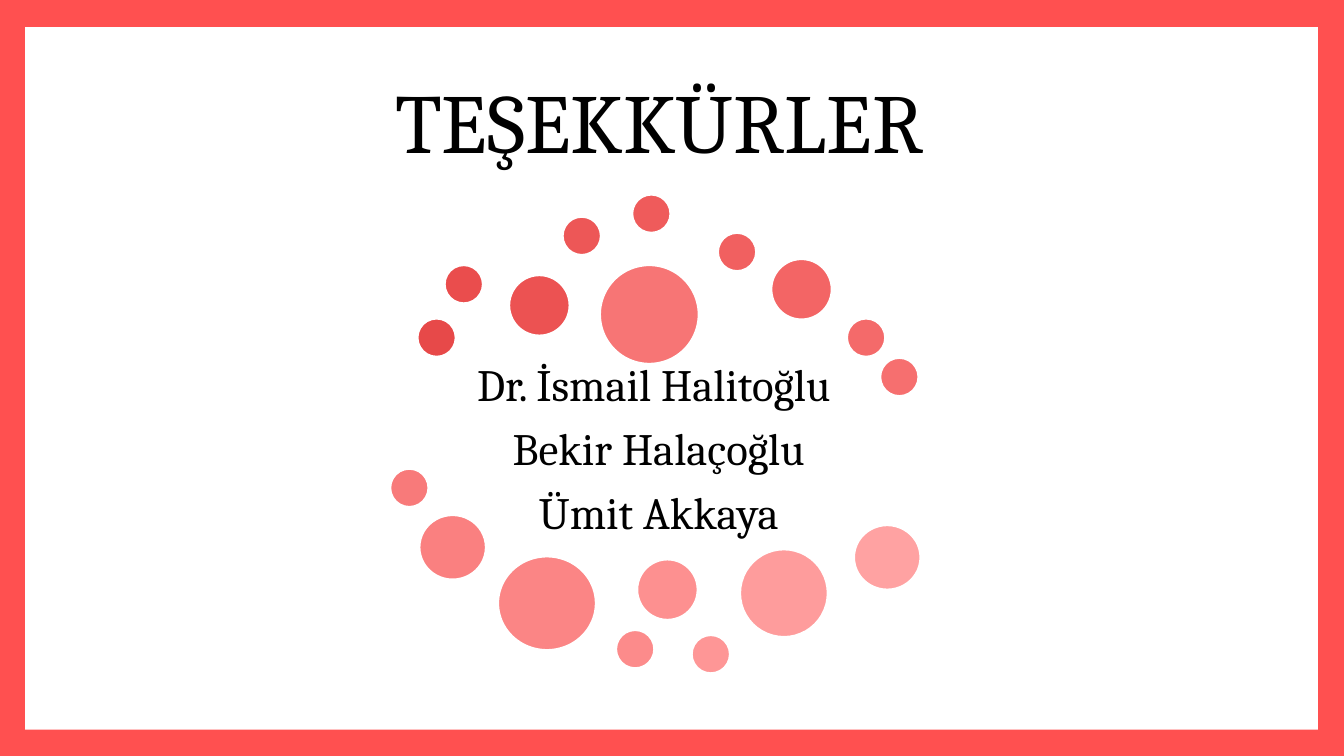
from pptx import Presentation
from pptx.dml.color import RGBColor
from pptx.enum.shapes import MSO_SHAPE as Shape
from pptx.enum.text import MSO_ANCHOR as Anchor, PP_ALIGN as Align
from pptx.util import Inches, Pt

WIDTH, HEIGHT = 13.33, 7.5
CORAL = RGBColor(0xFF, 0x50, 0x50)
WHITE = RGBColor(0xFF, 0xFF, 0xFF)
BLACK = RGBColor(0, 0, 0)
FONT = "Cambria"

NAMES = ["Dr. İsmail Halitoğlu ", "Bekir Halaçoğlu", "Ümit Akkaya"]

# Dot sizes: width, height in inches
SMALL, MEDIUM, LARGE = (0.38, 0.38), (0.6, 0.6), (0.98, 0.98)
OVAL, WIDE, ROUND = (0.66, 0.64), (0.97, 0.93), (0.87, 0.87)

# Dots of the ring: left and top within the ring, size, colour
DOTS = [
    (0.27, 1.23, SMALL, "E74949"),
    (0.54, 0.7, SMALL, "EA4D4D"),
    (1.18, 0.8, MEDIUM, "EC5252"),
    (1.71, 0.22, SMALL, "ED5757"),
    (2.4, 0, SMALL, "EF5B5B"),
    (3.25, 0.38, SMALL, "F16060"),
    (3.78, 0.64, MEDIUM, "F36565"),
    (4.53, 1.23, SMALL, "F46A6A"),
    (4.86, 1.62, SMALL, "F66F6F"),
    (2.08, 0.7, LARGE, "F77575"),
    (0, 2.72, SMALL, "F87A7A"),
    (0.29, 3.18, OVAL, "FA8080"),
    (1.07, 3.59, WIDE, "FB8585"),
    (2.24, 4.32, SMALL, "FC8B8B"),
    (2.45, 3.62, MEDIUM, "FD9090"),
    (2.99, 4.37, SMALL, "FE9696"),
    (3.47, 3.52, ROUND, "FE9C9C"),
    (4.6, 3.28, OVAL, "FFA2A2"),
]


def add_panel(page, kind, box, color):
    panel = page.shapes.add_shape(kind, *map(Inches, box))
    panel.shadow.inherit = False
    panel.fill.solid()
    panel.fill.fore_color.rgb = color
    panel.line.fill.background()
    return panel


def add_lines(page, box, lines, size, gap=0, inset=0.04):
    """Centred lines of text in the middle of the box."""
    frame = page.shapes.add_textbox(*map(Inches, box)).text_frame
    frame.word_wrap = True
    frame.vertical_anchor = Anchor.MIDDLE
    frame.margin_left = frame.margin_right = Inches(inset)
    frame.margin_top = frame.margin_bottom = Inches(inset)
    frame.text = "\n".join(lines)
    for para in frame.paragraphs:
        para.alignment = Align.CENTER
        para.line_spacing = 0.9
        para.space_after = Pt(gap)
        para.font.name = FONT
        para.font.size = Pt(size)
        para.font.color.rgb = BLACK


def add_frame(page, box):
    """Coral background with a white sheet in the box."""
    page.background.fill.solid()
    page.background.fill.fore_color.rgb = CORAL
    add_panel(page, Shape.RECTANGLE, box, WHITE)


def add_ring(page, left, top):
    """Names surrounded by a ring of dots."""
    add_lines(page, (left + 0.01, top + 1.75, 5.31, 1.58), NAMES, 32, gap=11.2)
    for x, y, size, color in DOTS:
        dot = add_panel(page, Shape.OVAL, (left + x, top + y, *size),
                        RGBColor.from_string(color))
        dot.line.color.rgb = WHITE
        dot.line.width = Pt(1.5)


def main():
    deck = Presentation()
    deck.slide_width, deck.slide_height = Inches(WIDTH), Inches(HEIGHT)
    page = deck.slides.add_slide(deck.slide_layouts[6])
    add_frame(page, (0.25, 0.27, 12.82, 6.97))
    add_lines(page, (0.89, 0.51, 11.3, 1.48), ["TEŞEKKÜRLER"], 60, inset=0.1)
    add_ring(page, 3.87, 1.93)
    deck.save("out.pptx")


if __name__ == "__main__":
    main()
